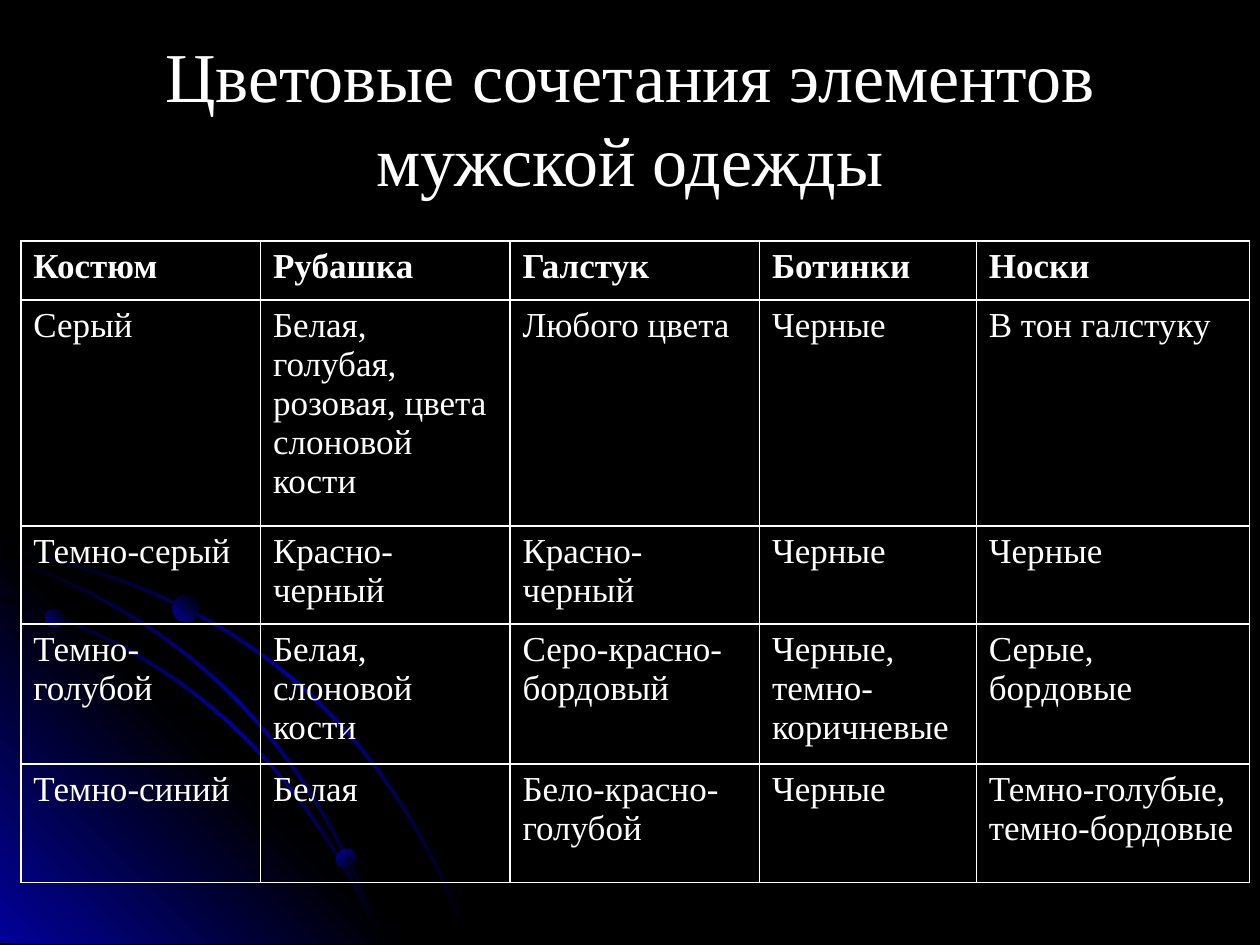
"""Build a slide with a table of colour combinations for men's clothing."""
from math import hypot
from typing import NamedTuple
from lxml.etree import SubElement
from pptx import Presentation
from pptx.dml.color import RGBColor
from pptx.enum.shapes import MSO_SHAPE as Preset
from pptx.enum.text import MSO_ANCHOR as Anchor, MSO_AUTO_SIZE as AutoSize, PP_ALIGN as Align
from pptx.oxml.ns import qn
from pptx.util import Cm, Pt


class Point(NamedTuple):
    x: float
    y: float


class Arc(NamedTuple):
    start: Point
    bend: Point
    end: Point


class Dot(NamedTuple):
    left: float
    top: float
    size: float
    angle: int


BLACK, WHITE, BLUE = "000000", "FFFFFF", "010199"
FALLING, RISING = 45, 315
BOTTOM = 19.02
UNITS_PER_CM = 1000

ARCS = {
    "outer": Arc(Point(0, 11.09), Point(6.99, 12.32), Point(9.42, BOTTOM)),
    "inner": Arc(Point(0, 12.09), Point(5.28, 13.56), Point(7.67, BOTTOM)),
    "middle": Arc(Point(0, 11.25), Point(5.59, 13.06), Point(7.67, BOTTOM)),
}
GLOW_SIZE = 8.18
DOTS = [Dot(0.91, 12.27, 0.38, RISING), Dot(6.78, 17.12, 0.41, FALLING),
        Dot(3.48, 12.01, 0.53, RISING)]

COLUMN_WIDTHS = {"Костюм": 4.83, "Рубашка": 5.03, "Галстук": 5.03, "Ботинки": 4.37, "Носки": 5.51}
ROW_HEIGHTS = [1.19, 4.55, 1.98, 2.82, 2.39]
OUTFITS = [
    ["Серый", "Белая, голубая, розовая, цвета слоновой кости", "Любого цвета",
     "Черные", "В тон галстуку"],
    ["Темно-серый", "Красно-черный", "Красно-черный", "Черные", "Черные"],
    ["Темно-голубой", "Белая, слоновой кости", "Серо-красно-бордовый",
     "Черные, темно-коричневые", "Серые, бордовые"],
    ["Темно-синий", "Белая", "Бело-красно-голубой", "Черные",
     "Темно-голубые, темно-бордовые"],
]


def color(value):
    return RGBColor.from_string(value)


def write(frame, text, size=20, bold=False, align=Align.LEFT,
          font="Times New Roman", ink=WHITE):
    para = frame.paragraphs[0]
    para.alignment = align
    span = para.add_run()
    span.text = text
    span.font.name = font
    span.font.size = Pt(size)
    span.font.bold = bold
    span.font.color.rgb = color(ink)


def ribbon(arc, thickness=0.06, steps=24):
    lower, upper = [], []
    for step in range(steps + 1):
        t = step / steps
        x, y = ((1 - t) ** 2 * start + 2 * t * (1 - t) * bend + t ** 2 * end
                for start, bend, end in zip(*arc))
        dx, dy = ((1 - t) * (bend - start) + t * (end - bend)
                  for start, bend, end in zip(*arc))
        offset = thickness / hypot(dx, dy)
        lower.append(Point(x, y))
        upper.append(Point(x + dy * offset, y - dx * offset))
    return lower + upper[::-1]


def fill_gradient(shape, colors, angle):
    shape.fill.background()
    blank = shape.element.spPr.find(qn("a:noFill"))
    gradient = blank.makeelement(qn("a:gradFill"), {"rotWithShape": "1"})
    stop_list = SubElement(gradient, qn("a:gsLst"))
    for index, value in enumerate(colors):
        position = 100000 * index // (len(colors) - 1)
        stop = SubElement(stop_list, qn("a:gs"), pos=str(position))
        SubElement(stop, qn("a:srgbClr"), val=value)
    SubElement(gradient, qn("a:lin"), ang=str(angle * 60000), scaled="0")
    blank.getparent().replace(blank, gradient)


def draw_borders(cell, value, points=1):
    properties = cell._tc.get_or_add_tcPr()
    for index, side in enumerate(("a:lnL", "a:lnR", "a:lnT", "a:lnB")):
        line = properties.makeelement(qn(side), {"w": str(Pt(points))})
        SubElement(SubElement(line, qn("a:solidFill")), qn("a:srgbClr"), val=value)
        properties.insert(index, line)


class SlideBuilder:
    def __init__(self, page, background=BLACK, border=WHITE):
        self.page = page
        self.border = border
        page.background.fill.solid()
        page.background.fill.fore_color.rgb = color(background)

    def decorate(self, shape, colors, angle):
        shape.shadow.inherit = False
        shape.line.fill.background()
        fill_gradient(shape, colors, angle)

    def outline(self, points, colors, angle):
        first, *rest = [(x * UNITS_PER_CM, y * UNITS_PER_CM) for x, y in points]
        builder = self.page.shapes.build_freeform(*first, scale=Cm(1) / UNITS_PER_CM)
        builder.add_line_segments(rest, close=True)
        self.decorate(builder.convert_to_shape(), colors, angle)

    def arc(self, arc):
        self.outline(ribbon(arc), [BLACK, BLUE, BLACK], FALLING)

    def corner_glow(self, size):
        corner = [Point(size, BOTTOM), Point(0, BOTTOM), Point(0, BOTTOM - size)]
        self.outline(corner, [BLUE, BLACK, BLUE], RISING)

    def dot(self, dot):
        shape = self.page.shapes.add_shape(
            Preset.OVAL, Cm(dot.left), Cm(dot.top), Cm(dot.size), Cm(dot.size))
        self.decorate(shape, [BLUE, BLACK], dot.angle)

    def title(self, text, left, top, width, height):
        box = self.page.shapes.title
        box.left, box.top, box.width, box.height = map(Cm, (left, top, width, height))
        frame = box.text_frame
        frame.word_wrap = True
        frame.auto_size = AutoSize.NONE
        frame.vertical_anchor = Anchor.MIDDLE
        write(frame, text, size=40, align=Align.CENTER)

    def table(self, rows, left, top, widths, heights):
        table = self.page.shapes.add_table(
            len(heights), len(widths), Cm(left), Cm(top),
            Cm(sum(widths)), Cm(sum(heights))).table
        table.horz_banding = False
        for column, width in zip(table.columns, widths):
            column.width = Cm(width)
        for index, (row, height, texts) in enumerate(zip(table.rows, heights, rows)):
            row.height = Cm(height)
            for cell, text in zip(row.cells, texts):
                cell.fill.background()
                draw_borders(cell, self.border)
                write(cell.text_frame, text, bold=index == 0)


def main():
    deck = Presentation()
    deck.slide_width, deck.slide_height = Cm(25.4), Cm(19.05)
    builder = SlideBuilder(deck.slides.add_slide(deck.slide_layouts[5]))
    builder.arc(ARCS["outer"])
    builder.corner_glow(GLOW_SIZE)
    for name in ("inner", "middle"):
        builder.arc(ARCS[name])
    for dot in DOTS:
        builder.dot(dot)
    builder.title("Цветовые сочетания элементов мужской одежды",
                  left=1.27, top=0.76, width=22.86, height=3.18)
    builder.table([list(COLUMN_WIDTHS), *OUTFITS], left=0.42, top=4.86,
                  widths=list(COLUMN_WIDTHS.values()), heights=ROW_HEIGHTS)
    deck.save("out.pptx")


if __name__ == "__main__":
    main()
